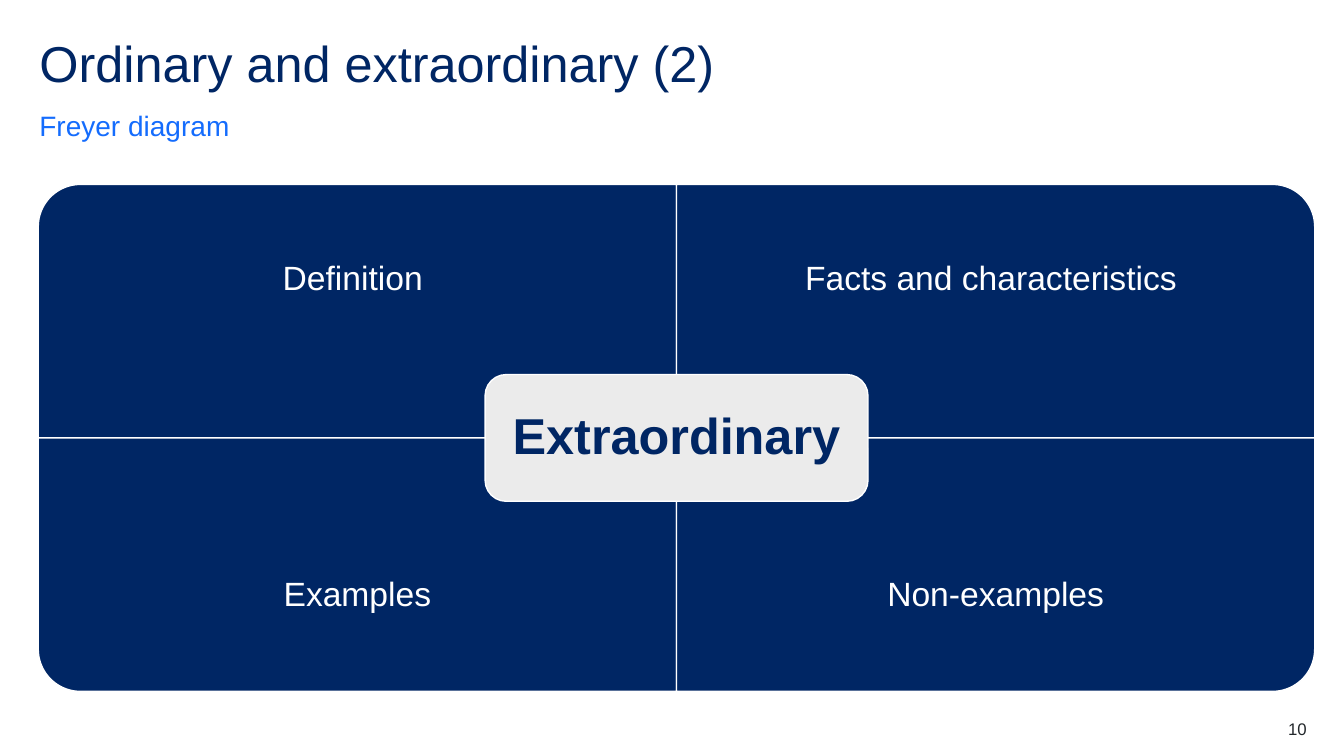
from math import cos, pi, sin

from lxml.etree import SubElement
from pptx import Presentation
from pptx.dml.color import RGBColor
from pptx.enum.shapes import MSO_SHAPE
from pptx.enum.text import MSO_ANCHOR, MSO_AUTO_SIZE, PP_ALIGN
from pptx.oxml.ns import qn
from pptx.util import Inches, Pt

TITLE = "Ordinary and extraordinary (2)"
SUBTITLE = "Freyer diagram"
CENTRE = "Extraordinary"
PAGE = "10"
QUADRANTS = [
    ["Definition", "Facts and characteristics"],
    ["Examples", "Non-examples"],
]
COLORS = {"navy": "002664", "blue": "146CFD", "grey": "EBEBEB",
          "white": "FFFFFF", "ink": "22272B"}

SLIDE_W, SLIDE_H = 13.33, 7.5
LEFT, TOP = 0.38, 1.83
CELL_W, CELL_H = 6.33, 2.515
RADIUS = CELL_H / 6
MID_X, MID_Y = LEFT + CELL_W, TOP + CELL_H
CENTRE_W, CENTRE_H = CELL_W * 0.6, CELL_H / 2
PAD = 0.31
ARC_STEPS = 24


def color(name):
    return RGBColor.from_string(COLORS[name])


def place(s, left, top, width, height):
    s.left, s.top, s.width, s.height = map(Inches, (left, top, width, height))


def write(s, text, size, ink, align=PP_ALIGN.LEFT, anchor=MSO_ANCHOR.TOP,
          spacing=0.9, bold=False, insets=(0, 0, 0, 0)):
    tf = s.text_frame
    tf.text = text
    tf.word_wrap = True
    tf.auto_size = MSO_AUTO_SIZE.NONE
    tf.vertical_anchor = anchor
    tf.margin_left, tf.margin_top, tf.margin_right, tf.margin_bottom = map(Inches, insets)
    p = tf.paragraphs[0]
    p.alignment = align
    p.line_spacing = spacing
    p.space_before = Pt(0)
    font = p.runs[0].font
    font.name, font.size, font.bold = "Arial", Pt(size), bold
    font.color.rgb = color(ink)
    return p


def paint(s, fill):
    s.shadow.inherit = False
    s.fill.solid()
    s.fill.fore_color.rgb = color(fill)
    s.line.color.rgb = color("white")
    s.line.width = Pt(1)


def add_quadrant(shapes, row, col, text):
    dx, dy = 2 * col - 1, 2 * row - 1
    outline = [(CELL_W, 0)]
    for step in range(ARC_STEPS + 1):
        angle = pi / 2 * step / ARC_STEPS
        outline.append((CELL_W - RADIUS + RADIUS * cos(angle),
                        CELL_H - RADIUS + RADIUS * sin(angle)))
    outline.append((0, CELL_H))
    builder = shapes.build_freeform(Inches(MID_X), Inches(MID_Y))
    builder.add_line_segments(
        [(Inches(MID_X + dx * x), Inches(MID_Y + dy * y)) for x, y in outline])
    s = builder.convert_to_shape()
    paint(s, "navy")
    insets = (PAD, 3 * PAD, PAD, PAD) if row else (PAD, PAD, 1.3 * PAD, 3 * PAD)
    write(s, text, 24, "white", PP_ALIGN.CENTER, MSO_ANCHOR.MIDDLE, insets=insets)


def main():
    prs = Presentation()
    prs.slide_width, prs.slide_height = Inches(SLIDE_W), Inches(SLIDE_H)
    slide = prs.slides.add_slide(prs.slide_layouts[1])
    shapes = slide.shapes

    place(shapes.title, 0.39, 0.39, 11.02, 0.6)
    write(shapes.title, TITLE, 36, "navy")

    body = slide.placeholders[1]
    place(body, 0.39, 1.07, 11.02, 0.34)
    p = write(body, SUBTITLE, 20, "blue", anchor=MSO_ANCHOR.BOTTOM, spacing=1.5)
    p.space_after = Pt(12)
    pPr = p._p.get_or_add_pPr()
    pPr.set("marL", "0")
    pPr.set("indent", "0")
    SubElement(pPr, qn("a:buNone"))

    for row, labels in enumerate(QUADRANTS):
        for col, label in enumerate(labels):
            add_quadrant(shapes, row, col, label)

    s = shapes.add_shape(MSO_SHAPE.ROUNDED_RECTANGLE,
                         Inches(MID_X - CENTRE_W / 2), Inches(MID_Y - CENTRE_H / 2),
                         Inches(CENTRE_W), Inches(CENTRE_H))
    paint(s, "grey")
    write(s, CENTRE, 36, "navy", PP_ALIGN.CENTER, MSO_ANCHOR.MIDDLE,
          bold=True, insets=(0.05,) * 4)

    number = shapes.add_textbox(Inches(12.17), Inches(7.13), Inches(0.79), Inches(0.2))
    write(number, PAGE, 12, "ink", PP_ALIGN.RIGHT, spacing=1.0)

    prs.save("out.pptx")


if __name__ == "__main__":
    main()
